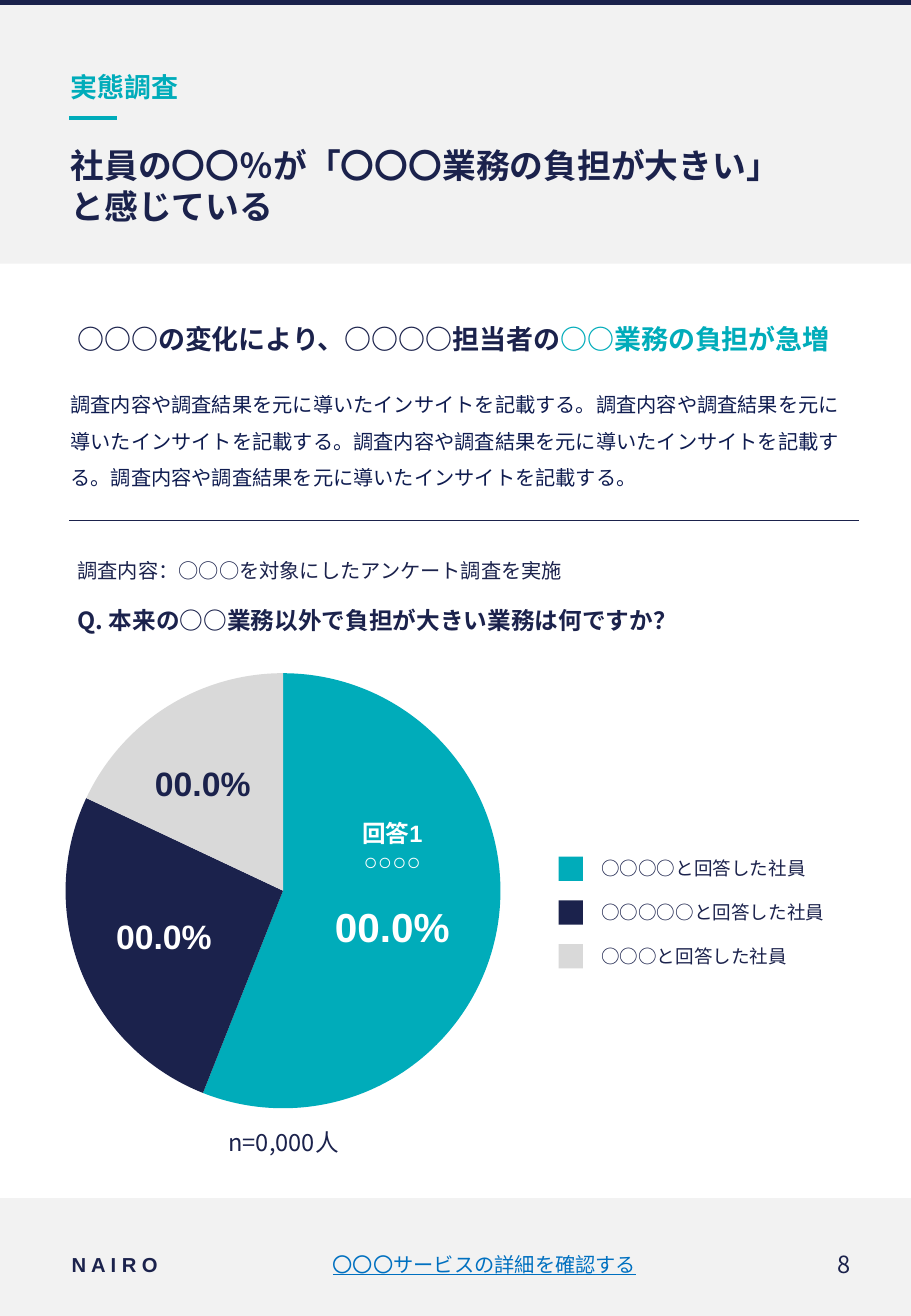
from lxml import etree
from pptx import Presentation
from pptx.dml.color import RGBColor
from pptx.enum.shapes import MSO_CONNECTOR, MSO_SHAPE as SHAPE
from pptx.enum.text import MSO_ANCHOR as ANCHOR, MSO_AUTO_SIZE, PP_ALIGN as ALIGN
from pptx.oxml.ns import qn
from pptx.util import Pt

PX = 9144  # 100 px to the inch
TEAL, NAVY, GREY, PALE, WHITE = "00ACBA", "1B224C", "D9D9D9", "F2F2F2", "FFFFFF"
ARIAL, NOTO = "Arial", "Noto Sans CJK JP"
LEFT, CENTER, RIGHT = ALIGN.LEFT, ALIGN.CENTER, ALIGN.RIGHT
color = RGBColor.from_string

prs = Presentation()
prs.slide_width, prs.slide_height = 750 * PX, 1083 * PX
slide = prs.slides.add_slide(prs.slide_layouts[2])
shapes = slide.shapes


def add_block(kind, at, fill):
    block = shapes.add_shape(kind, *[n * PX for n in at])
    block.shadow.inherit = False
    block.fill.solid()
    block.fill.fore_color.rgb = color(fill)
    block.line.fill.background()
    return block


def write(text, at, size, font, fill, bold=False, align=LEFT,
          anchor=ANCHOR.MIDDLE, inset=4, holder=None):
    box = holder or shapes.add_textbox(0, 0, 0, 0)
    box.left, box.top, box.width, box.height = [n * PX for n in at]
    frame = box.text_frame
    frame.text = text
    frame.word_wrap = True
    frame.auto_size = MSO_AUTO_SIZE.NONE
    frame.vertical_anchor = anchor
    frame.margin_left = frame.margin_right = inset * PX
    frame.margin_top = frame.margin_bottom = min(inset, 5) * PX
    for paragraph in frame.paragraphs:
        paragraph.alignment = align
        paragraph.space_before = Pt(0)
        for run in paragraph.runs:
            run.font.size, run.font.name, run.font.bold = Pt(size), font, bold
            run.font.color.rgb = color(fill)
            east_asian = etree.SubElement(run.font._element, qn("a:ea"))
            east_asian.set("typeface", font)
    return frame


# Header and footer bands
for at, fill in [((0, 0, 750, 217), PALE), ((0, 0, 750, 4), NAVY),
                 ((0, 986, 750, 97), PALE)]:
    add_block(SHAPE.RECTANGLE, at, fill)

# Rules under the category and under the insight
for x1, x2, y, fill, width in [(57, 96, 97, TEAL, 2.5), (57, 707, 428, NAVY, 0.5)]:
    rule = shapes.add_connector(MSO_CONNECTOR.STRAIGHT, x1 * PX, y * PX, x2 * PX, y * PX)
    rule.line.color.rgb = color(fill)
    rule.line.width = Pt(width)
    etree.SubElement(rule._element.spPr, qn("a:effectLst"))

# Category and title, brought in front of the header band
title, category = shapes.title, slide.placeholders[1]
for holder in (category, title):
    shapes._spTree.append(holder._element)
write("実態調査", (54, 52, 649, 39), 16, ARIAL, TEAL, True, holder=category)
write("社員の〇〇％が「〇〇〇業務の負担が大きい」\vと感じている",
      (54, 113, 650, 79), 20, ARIAL, NAVY, True, holder=title)

# Insight
headline = write("○○○の変化により、○○○○担当者の", (54, 257, 650, 43), 16, NOTO, NAVY,
                 True, inset=10).paragraphs[0]
highlight = headline.add_run()
highlight.text = "○○業務の負担が急増"
highlight.font.size, highlight.font.name, highlight.font.bold = Pt(16), NOTO, True
highlight.font.color.rgb = color(TEAL)
etree.SubElement(highlight.font._element, qn("a:ea")).set("typeface", NOTO)

insight = write("調査内容や調査結果を元に導いたインサイトを記載する。" * 4,
                (54, 309, 650, 118), 12, ARIAL, "0F1C50", anchor=ANCHOR.TOP)
insight.paragraphs[0].line_spacing = 1.5
insight.paragraphs[0].space_after = Pt(4.3)

# Survey question
write("調査内容：○○○を対象にしたアンケート調査を実施", (54, 450, 650, 39), 12, NOTO, NAVY, inset=10)
write("Q. 本来の○○業務以外で負担が大きい業務は何ですか？", (54, 491, 650, 39), 14, NOTO, NAVY,
      True, inset=10)

# Pie slices clockwise from twelve o'clock, with their legend rows
answers = [(56, TEAL, "○○○○と回答した社員"), (26, NAVY, "○○○○○と回答した社員"),
           (18, GREY, "○○○と回答した社員")]
start = 270
for row, (share, fill, label) in enumerate(answers):
    end = start + share * 3.6
    answer_slice = add_block(SHAPE.PIE, (54, 554, 358, 358), fill)
    for side, angle in enumerate((start, end)):
        answer_slice.adjustments[side] = angle % 360 * 0.6  # 60000 units per degree
    start = end
    add_block(SHAPE.RECTANGLE, (460, 705 + 36 * row, 20, 20), fill)
    write(label, (485, 695 + 36 * row, 219, 39), 11, NOTO, NAVY, inset=10)

# Labels on and below the pie
for text, at, size, font, fill, bold in [
        ("n=0,000人", (135, 923, 197, 39), 14, NOTO, NAVY, False),
        ("回答1\n○○○○", (264, 669, 118, 59), 14, ARIAL, WHITE, True),
        ("00.0%", (264, 737, 118, 50), 24, ARIAL, WHITE, True),
        ("00.0%", (76, 749, 118, 44), 20, ARIAL, WHITE, True),
        ("00.0%", (108, 623, 118, 44), 20, ARIAL, NAVY, True)]:
    write(text, at, size, font, fill, bold, CENTER, ANCHOR.TOP, 10)

# Footer
write("N A I R O", (55, 1025, 157, 31), 12, ARIAL, NAVY, True).word_wrap = False
service = write("〇〇〇サービスの詳細を確認する", (212, 1025, 374, 31), 12, ARIAL, "0070C0", align=CENTER)
service.paragraphs[0].runs[0].font.underline = True
write("8", (586, 1025, 118, 31), 14, NOTO, NAVY, align=RIGHT)

prs.save("out.pptx")
